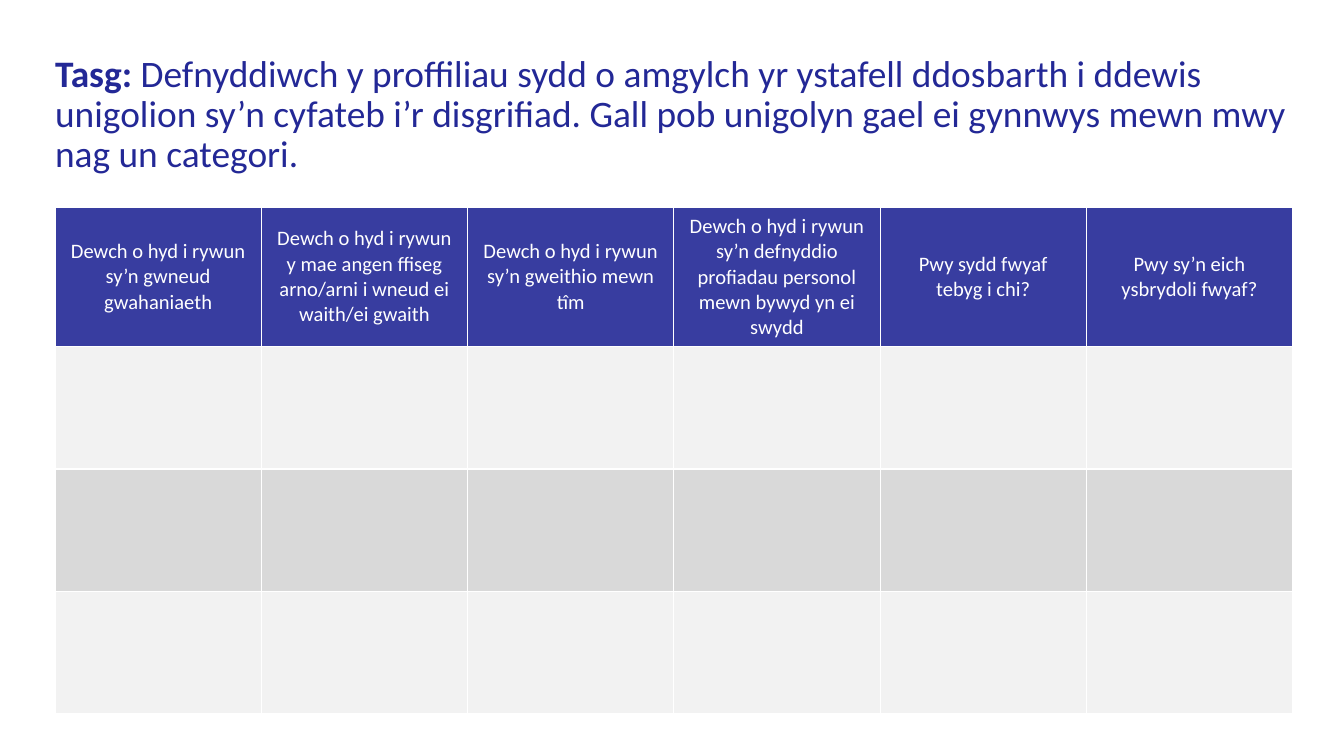
import pptx
import pptx.util
import pptx.dml.color
import pptx.enum.text
import pptx.oxml
import pptx.oxml.ns

Inches = pptx.util.Inches
Pt = pptx.util.Pt
FONT = "Calibri"
COLORS = {"navy": "232896", "white": "FFFFFF", "light": "F2F2F2", "dark": "D9D9D9"}
TASK = [
    ("Tasg: ", True),
    ("Defnyddiwch y proffiliau sydd o amgylch yr ystafell ddosbarth i ddewis "
     "unigolion sy’n cyfateb i’r disgrifiad. Gall pob unigolyn gael ei gynnwys "
     "mewn mwy nag un categori.", False),
]
HEADS = [
    "Dewch o hyd i rywun sy’n gwneud gwahaniaeth",
    "Dewch o hyd i rywun y mae angen ffiseg arno/arni i wneud ei waith/ei gwaith",
    "Dewch o hyd i rywun sy’n gweithio mewn tîm",
    "Dewch o hyd i rywun sy’n defnyddio profiadau personol mewn bywyd yn ei swydd",
    "Pwy sydd fwyaf tebyg i chi?",
    "Pwy sy’n eich ysbrydoli fwyaf?",
]
ROWS = ["navy", "light", "dark", "light"]


def color(name):
    """Return the named colour."""
    return pptx.dml.color.RGBColor.from_string(COLORS[name])


def style(run, size, name, bold=False):
    """Set the font of a run."""
    run.font.name = FONT
    run.font.size = Pt(size)
    run.font.bold = bold
    run.font.color.rgb = color(name)


def add_task(slide, left, top, width, height):
    """Place the task text in the given box."""
    box = slide.shapes.add_textbox(Inches(left), Inches(top), Inches(width), Inches(height))
    frame = box.text_frame
    frame.word_wrap = True
    frame.margin_left = frame.margin_right = frame.margin_top = frame.margin_bottom = 0
    para = frame.paragraphs[0]
    para.line_spacing = 0.9
    for text, bold in TASK:
        run = para.add_run()
        run.text = text
        style(run, 20, "navy", bold)


def paint(cell, name):
    """Fill a cell and draw its white borders."""
    cell.fill.solid()
    cell.fill.fore_color.rgb = color(name)
    props = cell._tc.get_or_add_tcPr()
    if name == "navy":
        tint = props.find(".//" + pptx.oxml.ns.qn("a:srgbClr"))
        tint.append(pptx.oxml.parse_xml(
            f'<a:alpha {pptx.oxml.ns.nsdecls("a")} val="90000"/>'))
    for spot, side in enumerate(["lnL", "lnR", "lnT", "lnB"]):
        props.insert(spot, pptx.oxml.parse_xml(
            f'<a:{side} {pptx.oxml.ns.nsdecls("a")} w="{Pt(0.75)}"><a:solidFill>'
            f'<a:srgbClr val="{COLORS["white"]}"/></a:solidFill></a:{side}>'))


def add_grid(slide, left, top, width, height, head):
    """Place the category table in the given box, with a header row of height head."""
    table = slide.shapes.add_table(
        len(ROWS), len(HEADS), Inches(left), Inches(top), Inches(width), Inches(height)).table
    for row, name in zip(table.rows, ROWS):
        row.height = Inches((height - head) / (len(ROWS) - 1))
        for cell in row.cells:
            paint(cell, name)
    table.rows[0].height = Inches(head)
    for cell, text in zip(table.rows[0].cells, HEADS):
        cell.text_frame.text = text
        cell.vertical_anchor = pptx.enum.text.MSO_ANCHOR.MIDDLE
        para = cell.text_frame.paragraphs[0]
        para.alignment = pptx.enum.text.PP_ALIGN.CENTER
        style(para.runs[0], 11, "white")


def main():
    """Build and save the slide."""
    deck = pptx.Presentation()
    deck.slide_width = Inches(10)
    deck.slide_height = deck.slide_width * 9 // 16
    slide = deck.slides.add_slide(deck.slide_layouts[6])
    add_task(slide, 0.41, 0.41, 9.21, 0.45)
    add_grid(slide, 0.41, 1.54, 9.21, 3.77, 1.04)
    deck.save("out.pptx")


if __name__ == "__main__":
    main()
